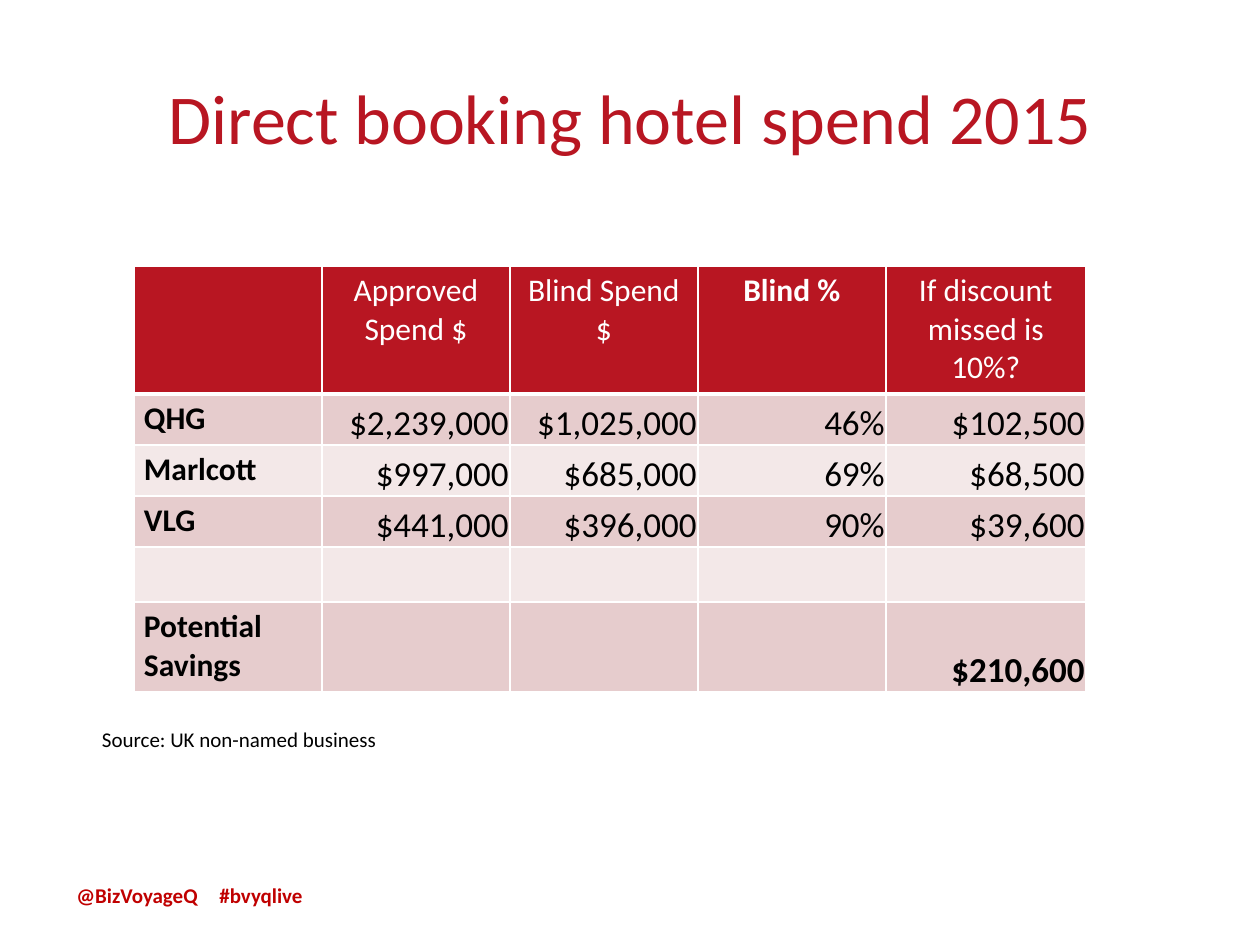
from pptx import Presentation
from pptx.dml.color import RGBColor as RGB
from pptx.enum.text import MSO_ANCHOR as Anchor, PP_ALIGN as Align
from pptx.oxml.ns import qn
from pptx.util import Pt
from lxml.etree import SubElement as Sub

PX = 914400 / 126  # EMU in one px
HUES = {"red": "B81622", "tag": "C00000", "dark": "E6CCCD",
        "light": "F3E8E8", "white": "FFFFFF", "black": "000000"}


def px(*nums):
    return [round(n * PX) for n in nums]


def add_run(para, text, size, hue, bold=False):
    run = para.add_run()
    run.text = text
    font = run.font
    font.name, font.size, font.bold = "Calibri", Pt(size), bold
    font.color.rgb = RGB.from_string(HUES[hue])


deck = Presentation()
deck.slide_width, deck.slide_height = px(1260, 945)
slide = deck.slides.add_slide(deck.slide_layouts[5])

# Title
title = slide.shapes.title
title.left, title.top, title.width, title.height = px(63, 38, 1134, 157)
title.text_frame.vertical_anchor = Anchor.MIDDLE
para = title.text_frame.paragraphs[0]
para.alignment = Align.CENTER
add_run(para, "Direct booking hotel spend 2015", 40, "red")

# Spend table
rows = [
    ["", "Approved Spend $", "Blind Spend $", "Blind %", "If discount missed is 10%?"],
    ["QHG", "$2,239,000", "$1,025,000", "46%", "$102,500"],
    ["Marlcott", "$997,000", "$685,000", "69%", "$68,500"],
    ["VLG", "$441,000", "$396,000", "90%", "$39,600"],
    [""] * 5,
    ["Potential Savings", "", "", "", "$210,600"],
]
wide = [188, 188, 188, 188, 200]
high = [128, 51, 51, 51, 55, 90]
table = slide.shapes.add_table(
    len(rows), len(wide), *px(134, 266, sum(wide), sum(high))).table
table.first_row = table.horz_banding = False
for col, width in zip(table.columns, px(*wide)):
    col.width = width
for row, height in zip(table.rows, px(*high)):
    row.height = height

for r, row in enumerate(rows):
    for c, text in enumerate(row):
        cell = table.cell(r, c)
        head = r == 0

        # White borders, heavier under the header
        props = cell._tc.get_or_add_tcPr()
        for side in ("lnL", "lnR", "lnT", "lnB"):
            thick = 3 if head and side == "lnB" else 1
            line = Sub(props, qn(f"a:{side}"), w=str(Pt(thick)))
            Sub(Sub(line, qn("a:solidFill")), qn("a:srgbClr"), val=HUES["white"])

        cell.fill.solid()
        hue = "red" if head else "dark" if r % 2 else "light"
        cell.fill.fore_color.rgb = RGB.from_string(HUES[hue])
        if not text:
            continue

        # Header and labels have wide margins, amounts sit in the corner
        para = cell.text_frame.paragraphs[0]
        if head or c == 0:
            edges = px(10, 6, 10, 6)
        else:
            edges = px(1, 1, 1, 0)
            cell.vertical_anchor = Anchor.BOTTOM
        (cell.margin_left, cell.margin_top,
         cell.margin_right, cell.margin_bottom) = edges
        if head:
            para.alignment = Align.CENTER
            add_run(para, text, 18, "white", text == "Blind %")
        elif c == 0:
            para.alignment = Align.LEFT
            add_run(para, text, 18, "black", True)
        else:
            para.alignment = Align.RIGHT
            add_run(para, text, 20, "black", r == len(rows) - 1)

# Source line
note = slide.shapes.add_textbox(*px(102, 727, 399, 35)).text_frame
note.word_wrap = True
note.margin_left = note.margin_top = note.margin_right = note.margin_bottom = 0
add_run(note.paragraphs[0], "Source: UK non-named business", 12, "black")

# Footer tags, the second on a tab stop
foot = slide.shapes.add_textbox(*px(64, 876, 262, 38)).text_frame
foot.word_wrap = True
para = foot.paragraphs[0]
tabs = Sub(para._p.get_or_add_pPr(), qn("a:tabLst"))
Sub(tabs, qn("a:tab"), pos=str(px(143)[0]), algn="l")
add_run(para, "@BizVoyageQ\t#bvyqlive", 12, "tag", True)

deck.save("out.pptx")
